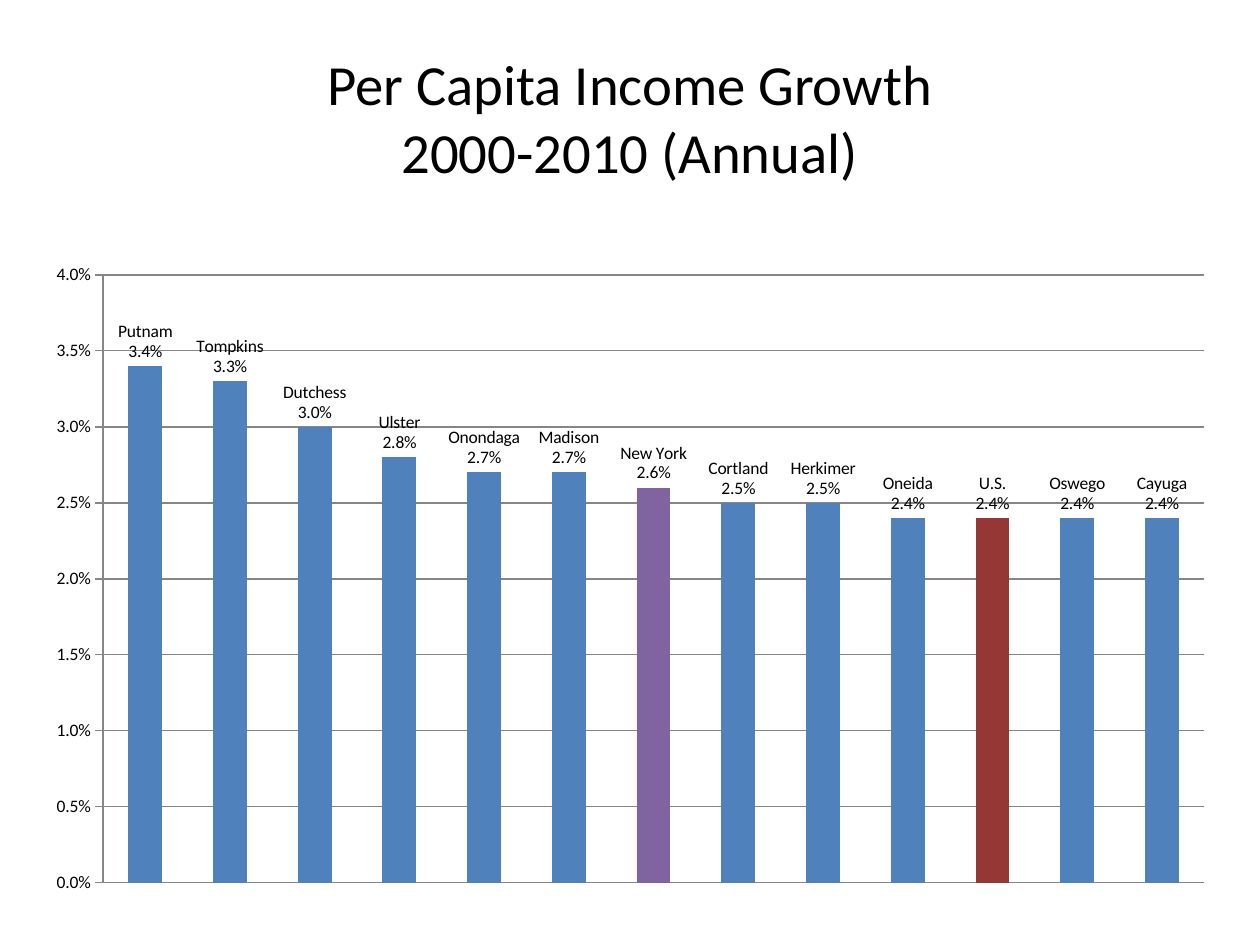
from lxml.etree import Element
from pptx import Presentation
from pptx.chart.data import CategoryChartData
from pptx.dml.color import RGBColor
from pptx.enum.chart import XL_CHART_TYPE, XL_LABEL_POSITION, XL_TICK_MARK
from pptx.enum.text import MSO_ANCHOR, MSO_AUTO_SIZE, PP_ALIGN
from pptx.oxml.ns import qn
from pptx.util import Cm, Pt

# Content
TITLE = ["Per Capita Income Growth", "2000-2010 (Annual)"]
GROWTH = [
    ("Putnam", 0.034), ("Tompkins", 0.033), ("Dutchess", 0.03),
    ("Ulster", 0.028), ("Onondaga", 0.027), ("Madison", 0.027),
    ("New York", 0.026), ("Cortland", 0.025), ("Herkimer", 0.025),
    ("Oneida", 0.024), ("U.S.", 0.024), ("Oswego", 0.024), ("Cayuga", 0.024),
]

# Style
FONT = "Calibri"
BLACK = RGBColor(0x00, 0x00, 0x00)
GRAY = RGBColor(0x86, 0x86, 0x86)
BLUE = RGBColor(0x4F, 0x81, 0xBD)
PURPLE = RGBColor(0x80, 0x64, 0xA2)
RED = RGBColor(0x95, 0x37, 0x35)
HIGHLIGHTS = {"New York": PURPLE, "U.S.": RED}
PERCENT = "0.0%"


def style_font(font, size):
    font.name, font.size, font.color.rgb = FONT, Pt(size), BLACK


def add_title(s):
    sp = s.shapes.title
    sp.left, sp.top, sp.width, sp.height = Cm(1.27), Cm(0.76), Cm(22.86), Cm(3.18)
    tf = sp.text_frame
    tf.auto_size = MSO_AUTO_SIZE.NONE
    tf.word_wrap = True
    tf.vertical_anchor = MSO_ANCHOR.MIDDLE
    p = tf.paragraphs[0]
    p.alignment = PP_ALIGN.CENTER
    for i, line in enumerate(TITLE):
        if i:
            p.add_line_break()
        r = p.add_run()
        r.text = line
        style_font(r.font, 32.4)


def add_growth_chart(s):
    data = CategoryChartData(number_format=PERCENT)
    data.categories = [name for name, _ in GROWTH]
    data.add_series("Series 1", [value for _, value in GROWTH])
    chart = s.shapes.add_chart(
        XL_CHART_TYPE.COLUMN_CLUSTERED,
        Cm(0.66), Cm(5.08), Cm(24.1), Cm(13.18), data).chart
    chart.has_title = False
    chart.has_legend = False
    style_font(chart.font, 10)

    # Axes
    chart.category_axis.visible = False
    axis = chart.value_axis
    axis.minimum_scale, axis.maximum_scale, axis.major_unit = 0, 0.04, 0.005
    axis.major_tick_mark = XL_TICK_MARK.CROSS
    axis.tick_labels.number_format = PERCENT
    axis.tick_labels.number_format_is_linked = False
    axis.has_major_gridlines = True
    for line in (axis.format.line, axis.major_gridlines.format.line):
        line.color.rgb = GRAY
        line.width = Pt(0.75)

    # Columns
    plot = chart.plots[0]
    plot.gap_width = 150
    plot.vary_by_categories = False
    series = plot.series[0]
    series.format.fill.solid()
    series.format.fill.fore_color.rgb = BLUE
    for i, (name, _) in enumerate(GROWTH):
        if name in HIGHLIGHTS:
            fill = series.points[i].format.fill
            fill.solid()
            fill.fore_color.rgb = HIGHLIGHTS[name]

    # Labels: name above value
    labels = series.data_labels
    labels.show_value = True
    labels.show_category_name = True
    labels.number_format = PERCENT
    labels.number_format_is_linked = False
    labels.position = XL_LABEL_POSITION.OUTSIDE_END
    style_font(labels.font, 10)
    separator = Element(qn("c:separator"))
    separator.text = "\n"
    dlbls = series.data_labels._element
    dlbls.find(qn("c:showBubbleSize")).addnext(separator)


def main():
    prs = Presentation()
    prs.slide_width, prs.slide_height = Cm(25.4), Cm(19.05)
    s = prs.slides.add_slide(prs.slide_layouts[5])
    add_title(s)
    add_growth_chart(s)
    prs.save("out.pptx")


if __name__ == "__main__":
    main()
